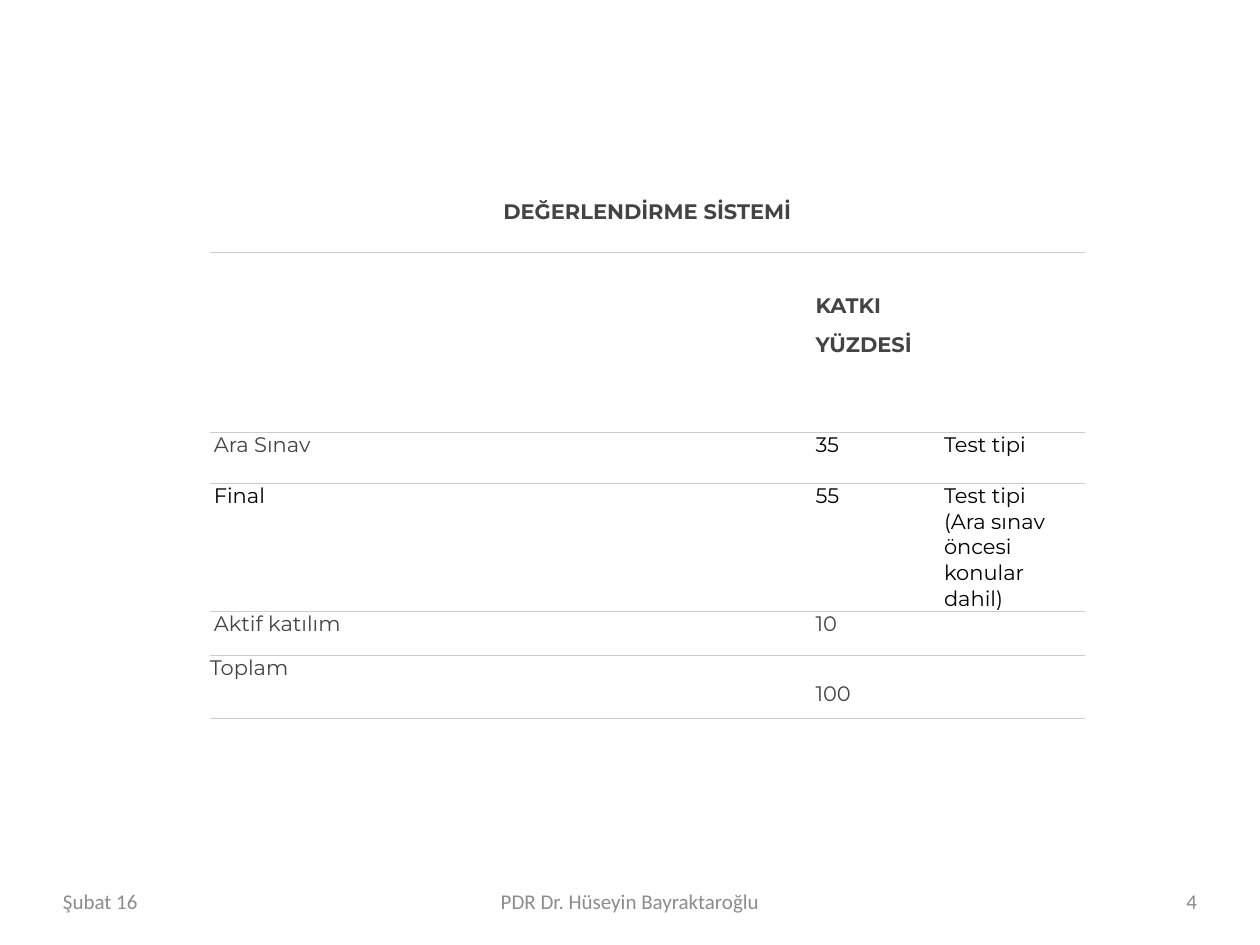
from lxml import etree
from pptx import Presentation
from pptx import util as u
from pptx.dml.color import RGBColor
from pptx.enum import text as t
from pptx.oxml import ns

COLORS = {"paper": "FFFFFF", "rule": "CCCCCC", "heading": "444444",
          "body": "000000", "footer": "8C8C8C"}
COLUMN_WIDTHS = (11.86, 0.08, 2.84, 2.84)
ROW_HEIGHTS = (1.07, 3.63, 1.02, 2.58, 0.89, 1.27)
HEADING = {"bold": True, "color": "heading"}
GRAY = {"color": "heading"}
LABEL = {"left": 0.08}
PERCENT = {"left": 0.25}
CELLS = {
    (0, 0): ("DEĞERLENDİRME SİSTEMİ", {**HEADING, "align": t.PP_ALIGN.CENTER}),
    (1, 2): ("KATKI\nYÜZDESİ", {**HEADING, **PERCENT, "top": 0.81, "before": 8}),
    (2, 0): ("Ara Sınav", {**LABEL, **GRAY}),
    (2, 2): ("35", PERCENT),
    (2, 3): ("Test tipi", {}),
    (3, 0): ("Final", LABEL),
    (3, 2): ("55", PERCENT),
    (3, 3): ("Test tipi\n(Ara sınav öncesi konular dahil)", {}),
    (4, 0): ("Aktif katılım", {**LABEL, **GRAY}),
    (4, 2): ("10", {**PERCENT, **GRAY}),
    (5, 0): ("Toplam", GRAY),
    (5, 2): ("100", {**PERCENT, **GRAY, "top": 0.51}),
}


def write_text(holder, text, font="Montserrat", size=12, color="body", bold=False,
               align=t.PP_ALIGN.LEFT, before=0, left=0, top=0):
    """Write formatted lines into a cell or text frame and set its margins."""
    holder.margin_left, holder.margin_top = u.Cm(left), u.Cm(top)
    holder.margin_right = holder.margin_bottom = 0
    frame = getattr(holder, "text_frame", holder)
    frame.word_wrap = True
    frame.text = text
    for index, paragraph in enumerate(frame.paragraphs):
        paragraph.alignment = align
        paragraph.space_before = u.Pt(before if index else 0)
        paragraph.font.size = u.Pt(size)
        for run in paragraph.runs:
            run.font.name, run.font.size, run.font.bold = font, u.Pt(size), bold
            run.font.color.rgb = RGBColor.from_string(COLORS[color])


def style_cell(cell, ruled_above):
    """Give a cell a paper fill and only horizontal rules."""
    cell.fill.solid()
    cell.fill.fore_color.rgb = RGBColor.from_string(COLORS["paper"])
    properties = cell._tc.get_or_add_tcPr()
    ruled = {"lnL": False, "lnR": False, "lnT": ruled_above, "lnB": True}
    for position, (side, visible) in enumerate(ruled.items()):
        line = etree.Element(ns.qn(f"a:{side}"), w=str(u.Pt(0.75)))
        fill = etree.SubElement(line, ns.qn("a:solidFill" if visible else "a:noFill"))
        if visible:
            etree.SubElement(fill, ns.qn("a:srgbClr"), val=COLORS["rule"])
        properties.insert(position, line)


def add_grading_table(slide, left, top):
    """Add the grading table with its top left corner at the given place."""
    table = slide.shapes.add_table(
        len(ROW_HEIGHTS), len(COLUMN_WIDTHS), u.Cm(left), u.Cm(top),
        u.Cm(sum(COLUMN_WIDTHS)), u.Cm(sum(ROW_HEIGHTS))).table
    table.first_row = table.horz_banding = False
    for column, width in zip(table.columns, COLUMN_WIDTHS):
        column.width = u.Cm(width)
    for row_index, (row, height) in enumerate(zip(table.rows, ROW_HEIGHTS)):
        row.height = u.Cm(height)
        for column_index, cell in enumerate(row.cells):
            text, text_format = CELLS.get((row_index, column_index), ("", {}))
            write_text(cell, text, **text_format)
            style_cell(cell, row_index > 0)
    table.cell(0, 0).merge(table.cell(0, len(COLUMN_WIDTHS) - 1))


def add_footer(slide, left, top, width, height):
    """Add date, author and page number along the given strip."""
    side, middle = 5.93, 8.05
    parts = (
        ("Şubat 16", 0, side, t.PP_ALIGN.LEFT),
        ("PDR Dr. Hüseyin Bayraktaroğlu", (width - middle) / 2, middle, t.PP_ALIGN.CENTER),
        ("4", width - side, side, t.PP_ALIGN.RIGHT),
    )
    for text, offset, part_width, align in parts:
        box = slide.shapes.add_textbox(u.Cm(left + offset), u.Cm(top),
                                       u.Cm(part_width), u.Cm(height))
        box.text_frame.vertical_anchor = t.MSO_ANCHOR.MIDDLE
        write_text(box.text_frame, text, font="Calibri", color="footer", align=align)


def main():
    """Build and save the presentation."""
    presentation = Presentation()
    presentation.slide_width, presentation.slide_height = u.Cm(25.4), u.Cm(19.05)
    slide = presentation.slides.add_slide(presentation.slide_layouts[6])
    add_grading_table(slide, 4.23, 4.02)
    add_footer(slide, 1.27, 17.65, 22.86, 1.02)
    presentation.save("out.pptx")


if __name__ == "__main__":
    main()
